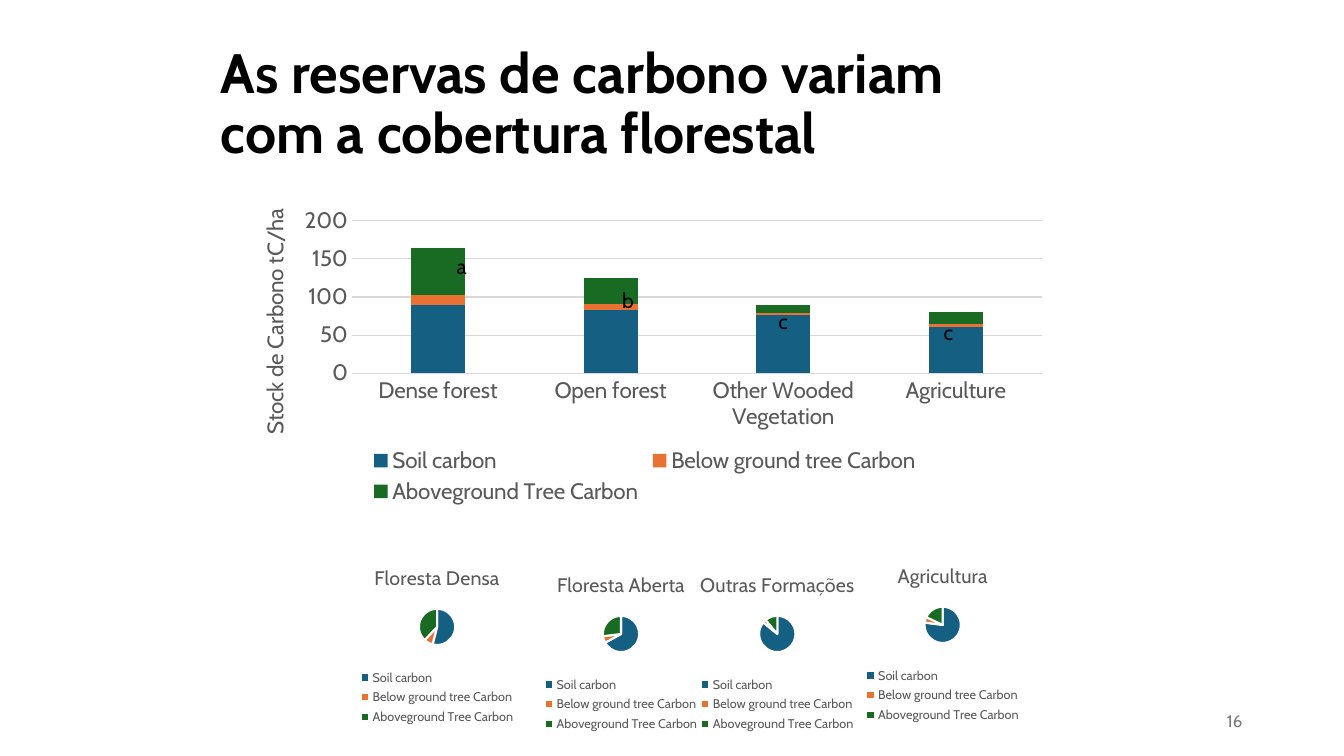
from lxml import etree
from pptx import Presentation
from pptx import util as u
from pptx.chart.data import CategoryChartData
from pptx.dml.color import RGBColor
from pptx.enum import chart as ch, text
from pptx.oxml import ns

BLACK = RGBColor(0, 0, 0)
WHITE = RGBColor(0xFF, 0xFF, 0xFF)
GREY = RGBColor(0x59, 0x59, 0x59)
PALE = RGBColor(0xD9, 0xD9, 0xD9)
MID = RGBColor(0x79, 0x79, 0x79)
BLUE = RGBColor(0x15, 0x60, 0x82)
ORANGE = RGBColor(0xE9, 0x71, 0x32)
GREEN = RGBColor(0x19, 0x6B, 0x24)
POOLS = {
    "Soil carbon": BLUE,
    "Below ground tree Carbon": ORANGE,
    "Aboveground Tree Carbon": GREEN,
}


class Page:
    face = "Cabin"

    def __init__(self, slide):
        self.slide = slide

    def font(self, font, size, color, bold=False):
        font.name = self.face
        font.size = u.Pt(size)
        font.color.rgb = color
        font.bold = bold

    def label(self, words, box, size, color=BLACK, bold=False, wrap=True,
              side=0.1, align=text.PP_ALIGN.LEFT, anchor=text.MSO_ANCHOR.MIDDLE, space=1.0):
        frame = self.slide.shapes.add_textbox(*map(u.Inches, box)).text_frame
        frame.word_wrap = wrap
        frame.vertical_anchor = anchor
        frame.margin_left = frame.margin_right = u.Inches(side)
        para = frame.paragraphs[0]
        para.alignment = align
        para.line_spacing = space
        run = para.add_run()
        run.text = words
        self.font(run.font, size, color, bold)

    def place(self, parent, index, **parts):
        """Set a manual layout, in fractions of the chart."""
        for old in parent.findall(ns.qn("c:layout")):
            parent.remove(old)
        layout = etree.Element(ns.qn("c:layout"))
        parent.insert(index, layout)
        manual = etree.SubElement(layout, ns.qn("c:manualLayout"))
        for tag, value in parts.items():
            etree.SubElement(manual, ns.qn("c:" + tag)).set("val", str(value))

    def title(self, owner, words, size):
        owner.has_title = True
        title = owner.chart_title if hasattr(owner, "chart_title") else owner.axis_title
        run = title.text_frame.paragraphs[0].add_run()
        run.text = words
        self.font(run.font, size, GREY)
        return title

    def chart(self, kind, box, cats, rows, size, small):
        data = CategoryChartData()
        data.categories = cats
        for name, vals in rows:
            data.add_series(name, vals)
        chart = self.slide.shapes.add_chart(kind, *map(u.Inches, box), data).chart
        self.font(chart.font, size, BLACK)
        chart.has_title = False
        chart.has_legend = True
        chart.legend.position = ch.XL_LEGEND_POSITION.BOTTOM
        chart.legend.include_in_layout = False
        self.font(chart.legend.font, small, GREY)
        return chart

    def stack(self, box, cats, rows, label):
        chart = self.chart(ch.XL_CHART_TYPE.COLUMN_STACKED, box, cats, rows, 16, 16)
        plot = chart.plots[0]
        plot.gap_width, plot.overlap = 219, 100
        plot.vary_by_categories = False
        for ser in plot.series:
            ser.format.fill.solid()
            ser.format.fill.fore_color.rgb = POOLS[ser.name]
        for axis in (chart.category_axis, chart.value_axis):
            axis.major_tick_mark = axis.minor_tick_mark = ch.XL_TICK_MARK.NONE
            self.font(axis.tick_labels.font, 16, GREY)
        val = chart.value_axis
        val.minimum_scale, val.maximum_scale, val.major_unit = 0, 200, 50
        val.format.line.fill.background()
        for line in (chart.category_axis.format.line, val.major_gridlines.format.line):
            line.color.rgb = PALE
            line.width = u.Pt(0.75)
        title = self.title(val, label, 16)
        self.place(title._element, 1, xMode="edge", yMode="edge", x=0.03, y=0.01)
        self.place(chart._chartSpace.chart.plotArea, 0, layoutTarget="inner",
                   xMode="edge", yMode="edge", x=0.146, y=0.063, w=0.834, h=0.495)

    def pie(self, box, name, vals):
        chart = self.chart(ch.XL_CHART_TYPE.PIE, box, POOLS, [("Series 1", vals)], 10, 9)
        self.title(chart, name, 14)
        plot = chart.plots[0]
        plot.vary_by_categories = True
        for i, color in enumerate(POOLS.values()):
            part = plot.series[0].points[i].format
            part.fill.solid()
            part.fill.fore_color.rgb = color
            part.line.color.rgb = WHITE
            part.line.width = u.Pt(1.5)
        # Small disc, centred across the chart
        wide, high = box[2:]
        disc, mid = 0.36, 0.75
        self.place(chart._chartSpace.chart.plotArea, 0, layoutTarget="inner",
                   xMode="edge", yMode="edge", x=0.5 - disc / wide / 2,
                   y=(mid - disc / 2) / high, w=disc / wide, h=disc / high)


def main():
    deck = Presentation()
    deck.slide_width, deck.slide_height = u.Inches(13.33), u.Inches(7.5)
    page = Page(deck.slides.add_slide(deck.slide_layouts[6]))

    # Stock by land cover
    stock = [(89, 83, 76, 61), (13, 8, 3, 4), (63, 34, 10, 15)]
    page.stack((2.29, 2, 8.21, 3.05),
               ["Dense forest", "Open forest", "Other Wooded Vegetation", "Agriculture"],
               list(zip(POOLS, stock)), "Stock de Carbono tC/ha")

    # Heading
    page.label("As reservas de carbono variam com a cobertura florestal",
               (2.09, 0.5, 7.98, 1.09), 39.6, bold=True, space=0.9)

    # Group letters on the columns
    for mark, x, y in [("a", 4.45, 2.47), ("b", 6.09, 2.8), ("c", 7.64, 3.01), ("c", 9.28, 3.12)]:
        page.label(mark, (x, y, 0.18, 0.35), 15, wrap=False, side=0.08,
                   anchor=text.MSO_ANCHOR.TOP)

    # Shares by land cover
    for name, x, y, wide, vals in [
        ("Floresta Densa", 3.24, 5.47, 2.19, (54, 8, 38)),
        ("Floresta Aberta", 4.98, 5.54, 2.36, (67, 6, 27)),
        ("Outras Formações", 6.53, 5.54, 2.36, (86, 3, 11)),
        ("Agricultura", 8.17, 5.45, 2.36, (77, 5, 18)),
    ]:
        page.pie((x, y, wide, 1.76), name, vals)

    # Page number
    page.label("16", (9.42, 6.95, 3, 0.4), 12, MID, align=text.PP_ALIGN.RIGHT)
    deck.save("out.pptx")


if __name__ == "__main__":
    main()
